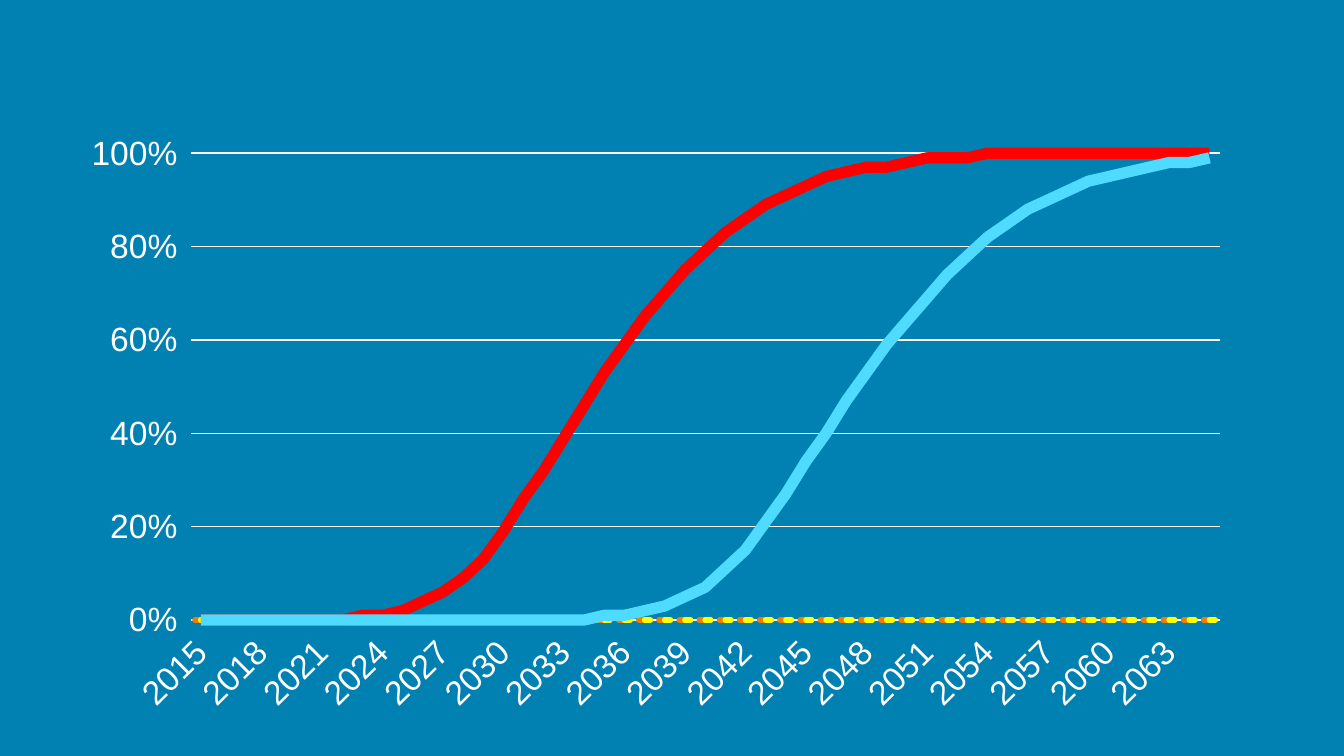
from dataclasses import dataclass

import pptx
import pptx.chart.data
import pptx.dml.color
import pptx.enum.chart
import pptx.oxml
import pptx.oxml.ns
import pptx.util


@dataclass(frozen=True)
class Theme:
    background: str = "0081B2"
    text: str = "FFFFFF"
    font: str = "Arial"
    label_size: float = 18
    grid_width: float = 0.75


@dataclass(frozen=True)
class Series:
    name: str
    color: str
    width: float
    percents: tuple[int, ...]


@dataclass(frozen=True)
class Box:
    """Left, top, width and height as shares of the enclosing area."""
    x: float
    y: float
    w: float
    h: float


THEME = Theme()
WIDTH = pptx.util.Inches(10)
HEIGHT = WIDTH * 9 // 16
CHART_BOX = Box(0.051, 0.162, 0.874, 0.798)
PLOT_BOX = Box(0.104, 0.051, 0.876, 0.774)
YEARS = range(2015, 2066)

# Flat columns, then the two S-curves
COLUMNS = [
    Series("Series 1", "EF7D00", 3, (0,) * len(YEARS)),
    Series("Series 2", "FFFF00", 3, (0,) * len(YEARS)),
]
CURVES = [
    Series("Series 3", "FF0000", 6, (0,) * 8 + (
        1, 1, 2, 4, 6, 9, 13, 19, 26, 32, 39, 46, 53, 59, 65, 70, 75, 79, 83,
        86, 89, 91, 93, 95, 96, 97, 97, 98, 99, 99, 99) + (100,) * 12),
    Series("Series 4", "4FDBFF", 6, (0,) * 20 + (
        1, 1, 2, 3, 5, 7, 11, 15, 21, 27, 34, 40, 47, 53, 59, 64, 69, 74, 78,
        82, 85, 88, 90, 92, 94, 95, 96, 97, 98, 98, 99)),
]


def rgb(color: str) -> pptx.dml.color.RGBColor:
    return pptx.dml.color.RGBColor.from_string(color)


def style_line(line, color: str, width: float) -> None:
    line.color.rgb = rgb(color)
    line.width = pptx.util.Pt(width)


def add_child(parent, tag: str, val=None):
    child = pptx.oxml.parse_xml(f"<c:{tag} {pptx.oxml.ns.nsdecls('c')}/>")
    if val is not None:
        child.set("val", str(val))
    parent.append(child)
    return child


def split_off_lines(chart, first: int) -> None:
    """Move the series from index first on into a line plot on the same axes."""
    bars = chart._chartSpace.xpath(".//c:barChart")[0]
    lines = add_child(bars.getparent(), "lineChart")
    bars.addnext(lines)
    add_child(lines, "grouping", "standard")
    add_child(lines, "varyColors", 0)
    for ser in bars.xpath("c:ser")[first:]:
        for flag in ser.xpath("c:invertIfNegative"):
            ser.remove(flag)
        lines.append(ser)
    add_child(lines, "marker", 1)
    for axis_id in bars.xpath("c:axId"):
        add_child(lines, "axId", axis_id.get("val"))


def place_plot(chart, box: Box) -> None:
    area = chart._chartSpace.xpath(".//c:plotArea")[0]
    for old in area.xpath("c:layout"):
        area.remove(old)
    layout = add_child(area, "layout")
    area.insert(0, layout)
    manual = add_child(layout, "manualLayout")
    add_child(manual, "layoutTarget", "inner")
    for tag in ("xMode", "yMode"):
        add_child(manual, tag, "edge")
    for tag in ("x", "y", "w", "h"):
        add_child(manual, tag, getattr(box, tag))


def style_axes(chart) -> None:
    for axis in (chart.category_axis, chart.value_axis):
        axis.format.line.fill.background()
        axis.major_tick_mark = pptx.enum.chart.XL_TICK_MARK.OUTSIDE
        axis.tick_labels.font.size = pptx.util.Pt(THEME.label_size)
        axis.tick_labels.font.color.rgb = rgb(THEME.text)

    # Every third year, slanted upwards
    years = chart.category_axis._element
    years.xpath("c:txPr/a:bodyPr")[0].set("rot", str(-45 * 60000))
    skip = add_child(years, "tickLblSkip", 3)
    years.xpath("c:noMultiLvlLbl")[0].addprevious(skip)

    shares = chart.value_axis
    shares.minimum_scale, shares.maximum_scale, shares.major_unit = 0, 1, 0.2
    shares.tick_labels.number_format = "0%"
    shares.tick_labels.number_format_is_linked = False
    shares.has_major_gridlines = True
    style_line(shares.major_gridlines.format.line, THEME.text, THEME.grid_width)


def add_growth_chart(slide, box: Box) -> None:
    data = pptx.chart.data.CategoryChartData(number_format="0%")
    data.categories = [str(year) for year in YEARS]
    for series in COLUMNS + CURVES:
        data.add_series(series.name, [p / 100 for p in series.percents])
    chart = slide.shapes.add_chart(
        pptx.enum.chart.XL_CHART_TYPE.COLUMN_CLUSTERED,
        round(box.x * WIDTH), round(box.y * HEIGHT),
        round(box.w * WIDTH), round(box.h * HEIGHT), data).chart
    chart.has_title = chart.has_legend = False
    chart.font.name = THEME.font
    chart.font.size = pptx.util.Pt(THEME.label_size)
    split_off_lines(chart, len(COLUMNS))
    place_plot(chart, PLOT_BOX)
    style_axes(chart)

    columns, curves = chart.plots
    columns.gap_width = 150
    columns.vary_by_categories = False
    for ser, series in zip(columns.series, COLUMNS):
        ser.format.fill.solid()
        ser.format.fill.fore_color.rgb = rgb(series.color)
        style_line(ser.format.line, series.color, series.width)
    for ser, series in zip(curves.series, CURVES):
        style_line(ser.format.line, series.color, series.width)
        ser.marker.style = pptx.enum.chart.XL_MARKER_STYLE.NONE
        ser.smooth = False


def main() -> None:
    prs = pptx.Presentation()
    prs.slide_width, prs.slide_height = WIDTH, HEIGHT
    slide = prs.slides.add_slide(prs.slide_layouts.get_by_name("Blank"))
    slide.background.fill.solid()
    slide.background.fill.fore_color.rgb = rgb(THEME.background)
    add_growth_chart(slide, CHART_BOX)
    prs.save("out.pptx")


if __name__ == "__main__":
    main()
